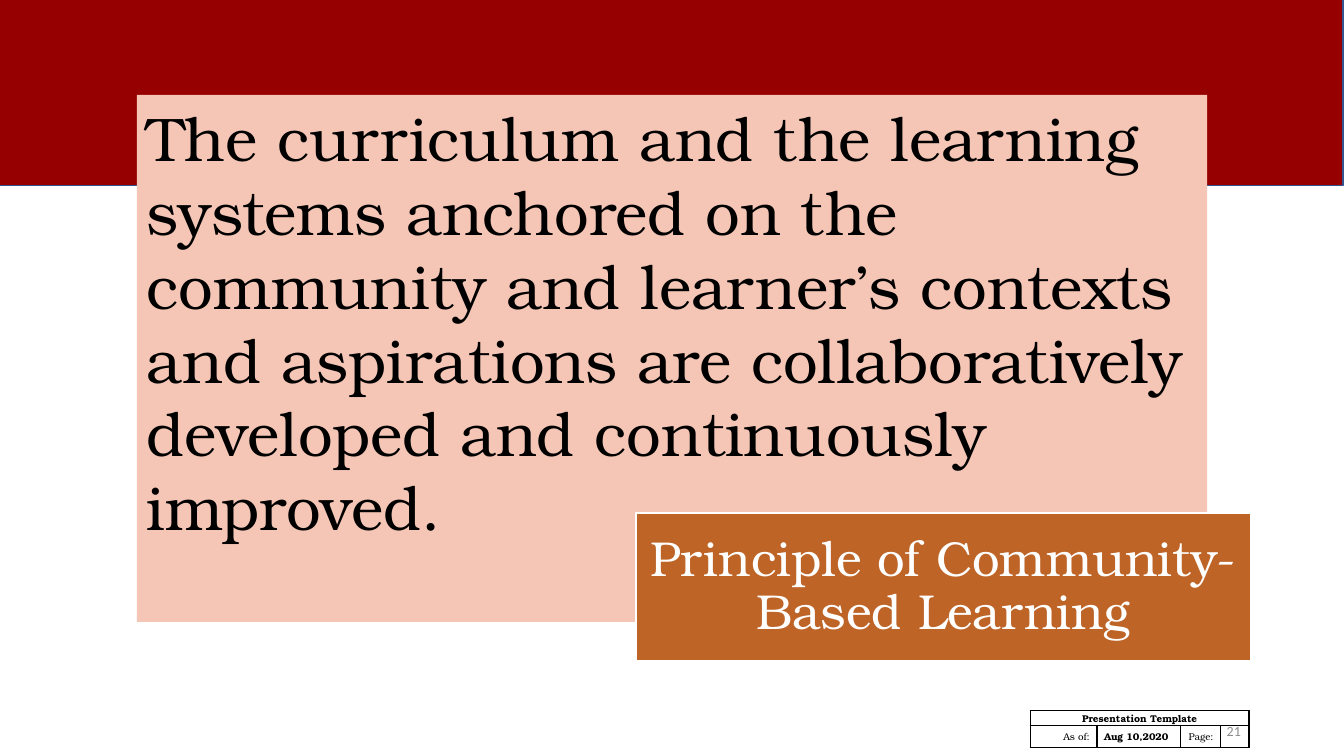
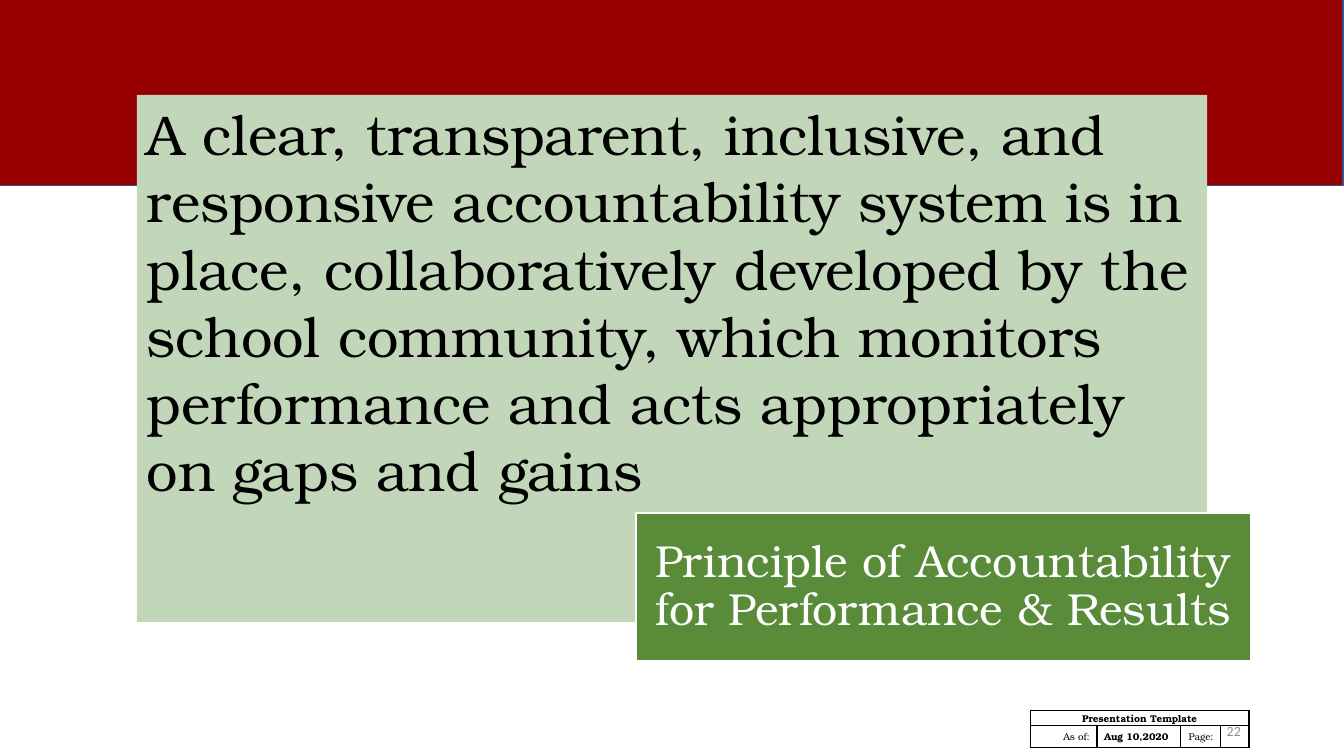
from dataclasses import dataclass

from lxml import etree
from pptx import Presentation
from pptx.dml.color import RGBColor
from pptx.enum import shapes, text
from pptx.oxml import ns
from pptx.util import Cm, Pt


@dataclass(frozen=True)
class Theme:
    font: str = "TeX Gyre Bonum"
    number_font: str = "Calibri"
    band: str = "960000"
    band_line: str = "325491"
    ink: str = "000000"
    paper: str = "FFFFFF"
    muted: str = "8C8C8C"
    line: float = 1
    stamp_size: float = 7
    number_size: float = 10


@dataclass(frozen=True)
class Box:
    left: float
    top: float
    width: float
    height: float

    def lengths(self):
        return [Cm(side) for side in (self.left, self.top, self.width, self.height)]


@dataclass(frozen=True)
class Principle:
    number: int
    name: str
    name_size: float
    statement: str
    statement_size: float
    panel: str
    label: str


THEME = Theme()
BAND = Box(-0.03, -0.15, 33.88, 4.83)
PANEL = Box(3.45, 2.39, 26.97, 13.28)
LABEL = Box(16.03, 12.93, 15.49, 3.73)
STAMP = Box(25.96, 17.91, 5.52, 0.93)
NUMBER = Box(30.38, 17.91, 1.14, 1.02)
STAMP_SHARES = (0.305, 0.38, 0.185, 0.13)
STAMP_ROWS = (0.39, 0.61)

PRINCIPLES = (
    Principle(
        21, "Principle of Community-Based Learning", 35,
        "The curriculum and the learning systems anchored on the community and "
        "learner’s contexts and aspirations are collaboratively developed and "
        "continuously improved.", 44, "F5C6B6", "BE6427"),
    Principle(
        22, "Principle of Accountability for Performance & Results", 32,
        "A clear, transparent, inclusive, and responsive accountability system is "
        "in place, collaboratively developed by the school community, which "
        "monitors performance and acts appropriately on gaps and gains",
        40, "C2D7B9", "5A8B39"),
)


def paint(shape, fill, line=None):
    shape.fill.solid()
    shape.fill.fore_color.rgb = RGBColor.from_string(fill)
    if line:
        shape.line.color.rgb = RGBColor.from_string(line)
        shape.line.width = Pt(THEME.line)
    else:
        shape.line.fill.background()


def add_block(page, box, fill, line=None):
    block = page.shapes.add_shape(shapes.MSO_SHAPE.RECTANGLE, *box.lengths())
    block.shadow.inherit = False
    paint(block, fill, line)
    return block


def write(frame, words, size, color, align, font=THEME.font, bold=False):
    para = frame.paragraphs[0]
    para.text = words
    para.alignment = align
    para.font.name = font
    para.font.size = Pt(size)
    para.font.bold = bold
    para.font.color.rgb = RGBColor.from_string(color)
    return para


def border_cell(cell):
    properties = cell._tc.get_or_add_tcPr()
    for index, side in enumerate(("lnL", "lnR", "lnT", "lnB")):
        edge = etree.Element(ns.qn(f"a:{side}"), w=str(Pt(THEME.line)))
        fill = etree.SubElement(edge, ns.qn("a:solidFill"))
        etree.SubElement(fill, ns.qn("a:srgbClr"), val=THEME.ink)
        properties.insert(index, edge)


def add_stamp(page, box):
    frame = page.shapes.add_table(2, len(STAMP_SHARES), *box.lengths())
    table = frame.table
    table.first_row = table.horz_banding = False
    for column, share in zip(table.columns, STAMP_SHARES):
        column.width = Cm(box.width * share)
    for row, share in zip(table.rows, STAMP_ROWS):
        row.height = Cm(box.height * share)
    table.cell(0, 0).merge(table.cell(0, len(STAMP_SHARES) - 1))
    center, left, right = text.PP_ALIGN.CENTER, text.PP_ALIGN.LEFT, text.PP_ALIGN.RIGHT
    entries = (
        (("Presentation Template", center, True),) + (("", center, False),) * 3,
        (("As of:", right, False), ("Aug 10,2020", left, True),
         ("Page:", right, False), ("", right, False)),
    )
    for row, row_entries in zip(table.rows, entries):
        for cell, (words, align, bold) in zip(row.cells, row_entries):
            cell.fill.background()
            cell.margin_left = cell.margin_right = Cm(0.18)
            cell.margin_top = cell.margin_bottom = 0
            cell.vertical_anchor = text.MSO_ANCHOR.MIDDLE
            write(cell.text_frame, words, THEME.stamp_size, THEME.ink, align, bold=bold)
            border_cell(cell)
    return frame


def furnish_layout(layout, page):
    title = layout.placeholders[0]
    title.left, title.top, title.width, title.height = LABEL.lengths()
    band = add_block(page, BAND, THEME.band, THEME.band_line)
    stamp = add_stamp(page, STAMP)
    tree = layout.shapes._spTree
    for offset, part in enumerate((band, stamp)):
        part._element.xpath(".//p:cNvPr")[0].set("id", str(20 + offset))
        tree.insert(2 + offset, part._element)


def add_number(page, box, number):
    frame = page.shapes.add_textbox(*box.lengths()).text_frame
    frame.word_wrap = True
    frame.vertical_anchor = text.MSO_ANCHOR.MIDDLE
    write(frame, str(number), THEME.number_size, THEME.muted,
          text.PP_ALIGN.RIGHT, THEME.number_font)


def add_statement(page, box, principle):
    frame = add_block(page, box, principle.panel).text_frame
    frame.word_wrap = True
    frame.vertical_anchor = text.MSO_ANCHOR.TOP
    write(frame, principle.statement, principle.statement_size, THEME.ink,
          text.PP_ALIGN.LEFT)


def set_label(page, box, principle):
    title = page.shapes.title
    title.left, title.top, title.width, title.height = box.lengths()
    paint(title, principle.label, THEME.paper)
    frame = title.text_frame
    frame.auto_size = text.MSO_AUTO_SIZE.NONE
    frame.word_wrap = True
    frame.vertical_anchor = text.MSO_ANCHOR.MIDDLE
    frame.margin_left = frame.margin_right = Cm(0.18)
    frame.margin_top = frame.margin_bottom = Cm(0.18)
    para = write(frame, principle.name, principle.name_size, THEME.paper,
                 text.PP_ALIGN.CENTER)
    para.line_spacing = 0.9
    page.shapes._spTree.append(title._element)


def fill_principle_page(page, principle):
    add_number(page, NUMBER, principle.number)
    add_statement(page, PANEL, principle)
    set_label(page, LABEL, principle)


def main():
    deck = Presentation()
    deck.slide_width, deck.slide_height = Cm(33.87), Cm(19.05)
    layout = deck.slide_layouts.get_by_name("Title Only")
    pages = [deck.slides.add_slide(layout) for _ in PRINCIPLES]
    furnish_layout(layout, pages[0])
    for page, principle in zip(pages, PRINCIPLES):
        fill_principle_page(page, principle)
    deck.save("out.pptx")


if __name__ == "__main__":
    main()
